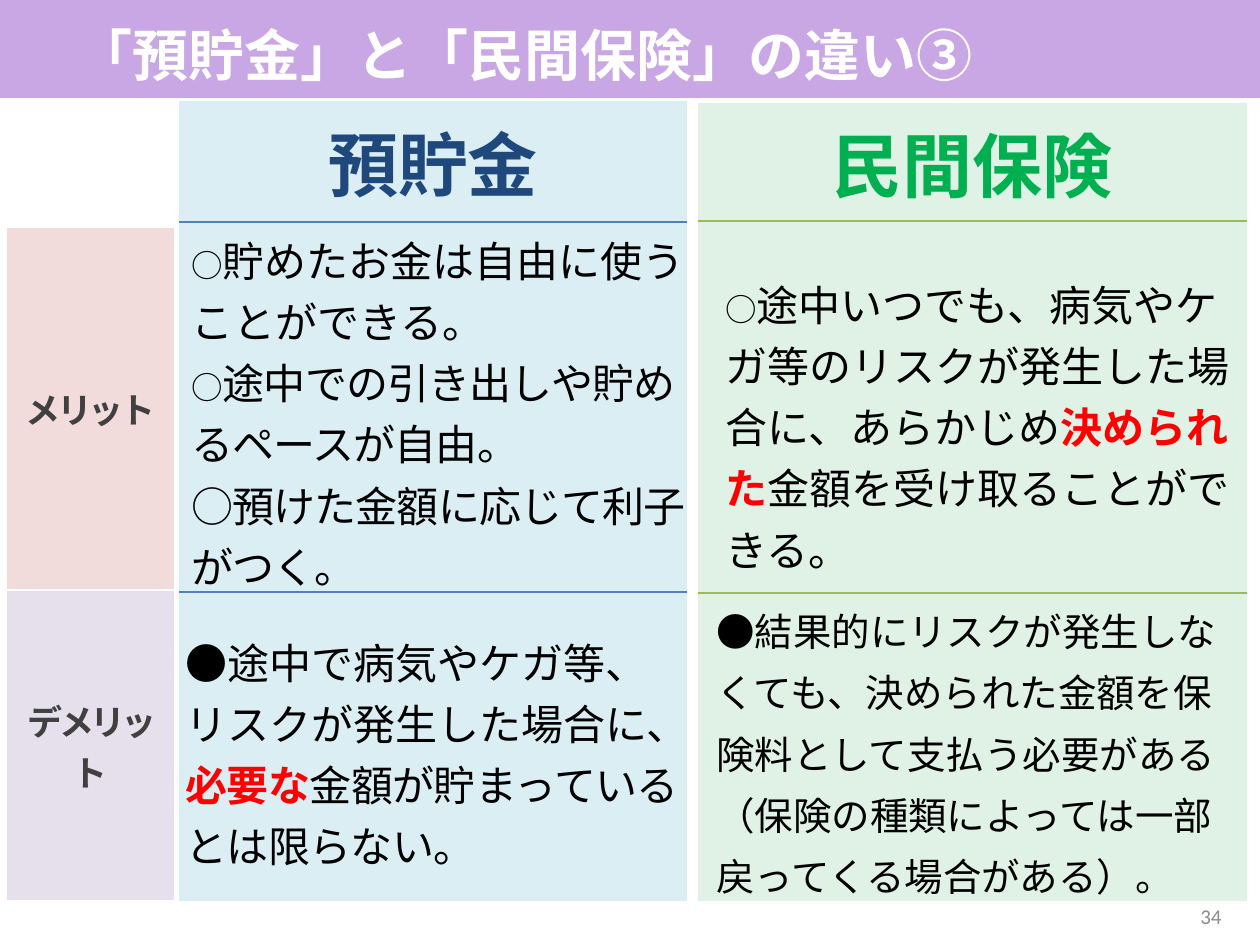
from pptx import Presentation
from pptx.dml.color import RGBColor
from pptx.enum.shapes import MSO_SHAPE
from pptx.enum.text import MSO_ANCHOR, MSO_AUTO_SIZE, PP_ALIGN
from pptx.oxml.ns import qn
from pptx.util import Pt
from lxml.etree import SubElement

SCALE = 914400 / 126
FACE = "Noto Sans CJK JP"
RED = "FF0000"


def px(*sizes):
    """Turn lengths in px into a list of EMU."""
    return [round(size * SCALE) for size in sizes]


def tint(target, color):
    """Give a fill or font color a hex value."""
    target.rgb = RGBColor.from_string(color)


def paint(item, color):
    """Fill a shape or cell with one plain color."""
    item.fill.solid()
    tint(item.fill.fore_color, color)


def write(para, runs, size, color, bold=None, align=None, face=FACE):
    """Write runs of (text, changes) into a paragraph with a shared font."""
    para.alignment = align
    font = para.font
    font.size, font.bold, font.name = Pt(size), bold, face
    tint(font.color, color)
    base = para._p.pPr.find(qn("a:defRPr"))
    SubElement(base, qn("a:ea")).set("typeface", face)
    for text, change in runs:
        run = para.add_run()
        run.text = text
        if "size" in change:
            run.font.size = Pt(change["size"])
        if "color" in change:
            run.font.bold = True
            tint(run.font.color, change["color"])
        if "gap" in change:
            run._r.get_or_add_rPr().set("spc", str(change["gap"]))


def edge(cell, lines):
    """Draw the given cell sides (L, R, T, B) and clear the others."""
    props = cell._tc.get_or_add_tcPr()
    for spot, side in enumerate("LRTB"):
        line = props.makeelement(qn("a:ln" + side), {"w": str(Pt(1))})
        if side in lines:
            fill = SubElement(line, qn("a:solidFill"))
            SubElement(fill, qn("a:srgbClr")).set("val", lines[side])
        else:
            SubElement(line, qn("a:noFill"))
        props.insert(spot, line)


def stack(slide, box, rows, fills, lines):
    """Add a table of one column and return its cells."""
    left, top, width = box
    frame = slide.shapes.add_table(len(rows), 1, *px(left, top, width, sum(rows)))
    table = frame.table
    table.first_row = table.horz_banding = False
    cells = []
    for spot, (high, fill, line) in enumerate(zip(rows, fills, lines)):
        table.rows[spot].height = px(high)[0]
        cell = table.cell(spot, 0)
        cell.vertical_anchor = MSO_ANCHOR.MIDDLE
        paint(cell, fill)
        edge(cell, line)
        cells.append(cell)
    return cells


def label(slide, box, *style, **more):
    """Add a box with one line of text set in its middle."""
    frame = slide.shapes.add_textbox(*px(*box)).text_frame
    frame.word_wrap = True
    frame.vertical_anchor = MSO_ANCHOR.MIDDLE
    write(frame.paragraphs[0], *style, **more)


def note(slide, box, paras, size):
    """Add a box of wrapped paragraphs with fixed line spacing."""
    frame = slide.shapes.add_textbox(*px(*box)).text_frame
    frame.word_wrap = True
    frame.auto_size = MSO_AUTO_SIZE.SHAPE_TO_FIT_TEXT
    for spot, runs in enumerate(paras):
        para = frame.add_paragraph() if spot else frame.paragraphs[0]
        para.line_spacing = Pt(35)
        write(para, runs, size, "000000")


def header(slide, box, text):
    """Add the title band."""
    left, top, width, height = box
    band = slide.shapes.add_shape(MSO_SHAPE.RECTANGLE, *px(*box))
    band.shadow.inherit = False
    paint(band, "C9A6E4")
    band.line.fill.background()
    label(slide, (left + 64, top + 4, width - 296, height + 2),
          [(text, {})], 32, "FFFFFF", bold=True)


def sider(slide, box, rows, names):
    """Add the row labels at the side."""
    white = dict.fromkeys("LRTB", "FFFFFF")
    cells = stack(slide, box, rows, ["F2DCDB", "E6E0EC"], [white] * 2)
    for cell, name in zip(cells, names):
        write(cell.text_frame.paragraphs[0], [(name, {"gap": -210})],
              20, "404040", bold=True, align=PP_ALIGN.CENTER)


def column(slide, box, rows, name, colors, notes):
    """Add one compared choice: its headed table and the notes on it."""
    ink, fill, rule = colors
    lines = [{"B": rule}, {"T": rule, "B": rule}, {"T": rule}]
    cells = stack(slide, box, rows, [fill] * 3, lines)
    write(cells[0].text_frame.paragraphs[0], [(name, {})], 40, ink,
          bold=True, align=PP_ALIGN.CENTER)
    for (left, top, width, height), size, paras in notes:
        note(slide, (box[0] + left, box[1] + top, width, height), paras, size)


def main():
    """Build the slide and save it."""
    deck = Presentation()
    deck.slide_width, deck.slide_height = px(1260, 945)
    slide = deck.slides.add_slide(deck.slide_layouts[6])
    ring = ("○", {"size": 18})
    tight, snug = {"gap": -50}, {"gap": -40}

    header(slide, (0, 0, 1260, 98), "「預貯金」と「民間保険」の違い③")
    sider(slide, (6, 227, 169), (363, 311), ("メリット", "デメリット"))
    column(slide, (179, 101, 508), (121, 370, 309), "預貯金",
           ("1F497D", "DBEEF4", "4F81BD"), [
        ((0, 117, 525, 378), 24, [
            [ring, ("貯めたお金は自由に使うことができる。", {})],
            [ring, ("途中での引き出しや貯めるペースが自由。", tight)],
            [("○預けた金額に応じて利子がつく。", tight)]]),
        ((-6, 519, 525, 255), 24, [
            [("●途中で病気やケガ等、リスクが発生した場合に、", {}),
             ("必要な", {"color": RED, **snug}),
             ("金額が貯まっているとは限らない。", snug)]])])
    column(slide, (698, 103, 549), (118, 372, 308), "民間保険",
           ("00B050", "E0F1E6", "9BBB59"), [
        ((15, 159, 551, 253), 24, [
            [ring,
             ("途中いつでも、病気やケガ等のリスクが発生した場合に、あらかじめ", {}),
             ("決められた", {"color": RED}),
             ("金額を受け取ることができる。", {})]]),
        ((6, 484, 551, 314), 22, [
            [("●結果的にリスクが発生しなくても、決められた金額を保険料として"
              "支払う必要がある（保険の種類によっては一部戻ってくる場合がある）。", {})]])])
    label(slide, (940, 891, 294, 50), [("34", {})], 12, "8C8C8C",
          align=PP_ALIGN.RIGHT, face="Calibri")
    deck.save("out.pptx")


if __name__ == "__main__":
    main()
